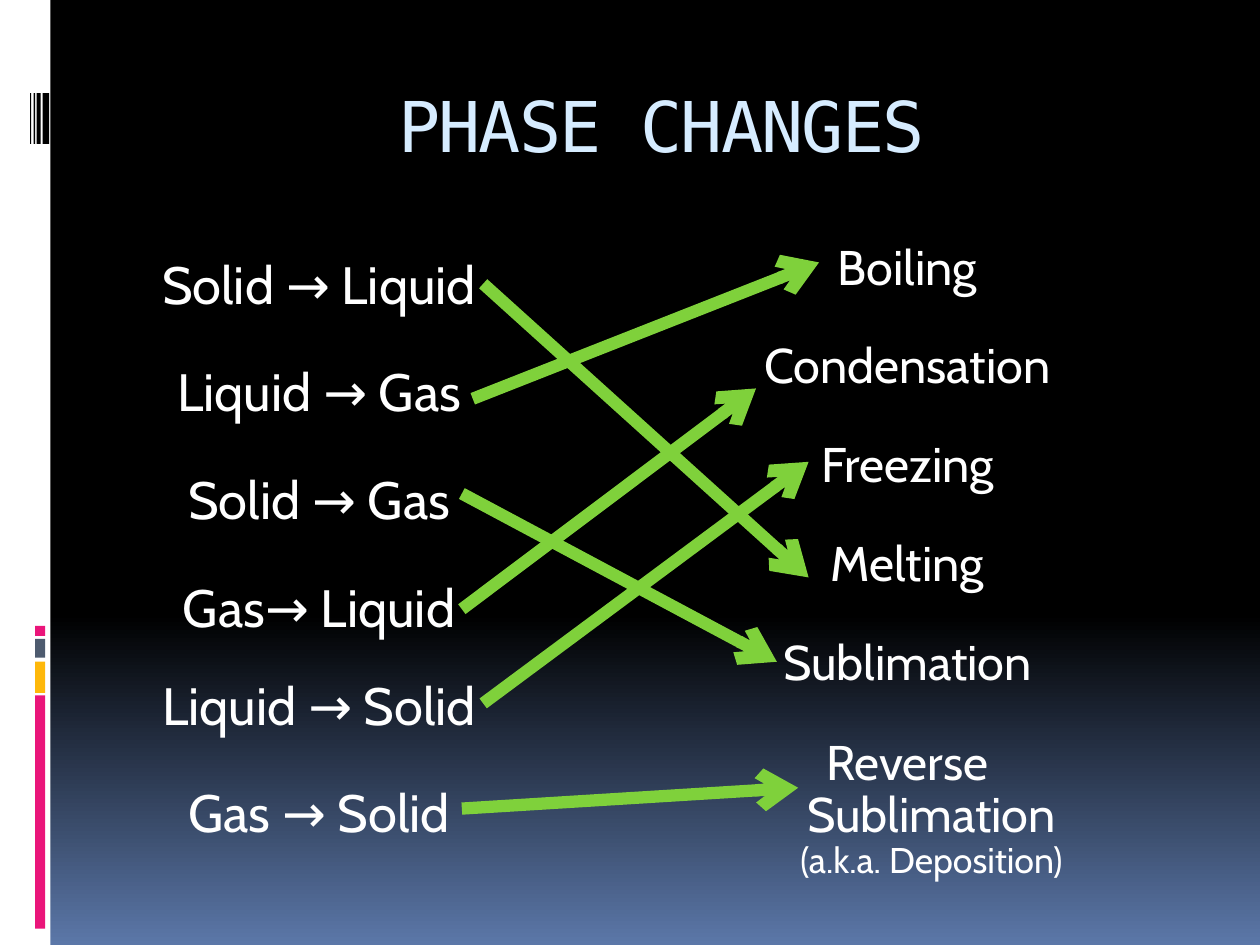
import copy
from typing import NamedTuple

import pptx
import pptx.dml.color
import pptx.enum.shapes
import pptx.enum.text
import pptx.oxml.ns
import pptx.oxml.xmlchemy
import pptx.util

Cm = pptx.util.Cm
Pt = pptx.util.Pt
qn = pptx.oxml.ns.qn
make = pptx.oxml.xmlchemy.OxmlElement

HUES = {
    "black": "000000", "white": "FFFFFF", "pink": "EA157A", "gold": "FEB80A",
    "slate": "4E5B6F", "blue": "5B77A8", "pale": "D6ECFF", "green": "7FD13B",
}


class Bar(NamedTuple):
    left: float
    top: float
    width: float
    height: float
    hue: str


class Arrow(NamedTuple):
    x: float
    y: float
    to_x: float
    to_y: float


class Line(NamedTuple):
    text: str
    gap: float = 0
    pitch: float = 1.0
    note: str = ""


# Side strip, its coloured blocks and the thin black stripes
BARS = [
    Bar(0, 0, 1.02, 19.05, "white"),
    Bar(0.71, 14.02, 0.2, 4.7, "pink"),
    Bar(0.71, 13.34, 0.2, 0.63, "gold"),
    Bar(0.71, 12.88, 0.2, 0.38, "slate"),
    Bar(0.71, 12.62, 0.2, 0.2, "pink"),
] + [
    Bar(left, 1.88, width, 1.02, "black")
    for left, width in ((0.86, 0.13), (0.74, 0.08), (0.68, 0.03), (0.61, 0.02))
]

CHANGES = [
    Line("Solid → Liquid"),
    Line("Liquid → Gas", 25.5),
    Line("Solid → Gas", 25.5),
    Line("Gas→ Liquid", 25.5),
    Line("Liquid → Solid", 20),
    Line("Gas → Solid", 25.5),
]
NAMES = [Line("Boiling")] + [
    Line(name, 26.6, 0.9)
    for name in ("Condensation", "Freezing", "Melting", "Sublimation")
] + [Line("Reverse Sublimation ", 26.6, 0.9, "(a.k.a. Deposition)")]

ARROWS = [
    Arrow(9.31, 12.28, 15.24, 7.83),
    Arrow(9.31, 9.95, 15.66, 13.34),
    Arrow(9.53, 8.04, 16.51, 5.29),
    Arrow(9.74, 5.72, 16.3, 11.64),
    Arrow(9.74, 14.18, 16.3, 9.31),
    Arrow(9.31, 16.3, 16.09, 15.88),
]


def tint(name: str) -> pptx.dml.color.RGBColor:
    return pptx.dml.color.RGBColor.from_string(HUES[name])


def style(thing, form: dict) -> None:
    for key, value in form.items():
        setattr(thing, key, value)


def shade(slide) -> None:
    """Fill the background: black, fading to blue at the foot."""
    fill = slide.background.fill
    fill.gradient()
    fill.gradient_angle = 270
    stops = slide.element.find(".//" + qn("a:gsLst"))
    stops.append(copy.deepcopy(stops[-1]))
    marks = ((0, "black"), (0.65, "black"), (1, "blue"))
    for stop, (place, hue) in zip(fill.gradient_stops, marks):
        stop.position = place
        stop.color.rgb = tint(hue)


def draw_bar(slide, bar: Bar) -> None:
    shape = slide.shapes.add_shape(
        pptx.enum.shapes.MSO_SHAPE.RECTANGLE, *map(Cm, bar[:4]))
    shape.shadow.inherit = False
    shape.fill.solid()
    shape.fill.fore_color.rgb = tint(bar.hue)
    shape.line.fill.background()


def draw_arrow(slide, arrow: Arrow) -> None:
    link = slide.shapes.add_connector(
        pptx.enum.shapes.MSO_CONNECTOR.STRAIGHT, *map(Cm, arrow))
    link.line.width = Pt(7)
    link.line.color.rgb = tint("green")
    tail = make("a:tailEnd")
    tail.set("type", "arrow")
    link.line._get_or_add_ln().append(tail)
    link._element.spPr.append(make("a:effectLst"))


def add_run(para, text: str, size: float, face: str, hue: str):
    run = para.add_run()
    run.text = text
    style(run.font, {"size": Pt(size), "name": face})
    run.font.color.rgb = tint(hue)
    return run


def add_box(slide, left: float, top: float, width: float, height: float):
    frame = slide.shapes.add_textbox(*map(Cm, (left, top, width, height))).text_frame
    style(frame, {"word_wrap": True,
                  "vertical_anchor": pptx.enum.text.MSO_ANCHOR.TOP})
    return frame


def draw_list(slide, box: tuple, lines: list, size: float) -> None:
    frame = add_box(slide, *box)
    for i, line in enumerate(lines):
        para = frame.add_paragraph() if i else frame.paragraphs[0]
        style(para, {"alignment": pptx.enum.text.PP_ALIGN.CENTER,
                     "space_before": Pt(line.gap),
                     "line_spacing": line.pitch})
        props = para._p.get_or_add_pPr()
        props.set("marL", str(Cm(1.14)))
        props.set("indent", str(Cm(-0.97)))
        add_run(para, line.text, size, "Cabin", "white")
        if line.note:
            add_run(para, line.note, 20.4, "Cabin", "white")


def draw_title(slide, text: str) -> None:
    frame = add_box(slide, 2.54, 1.42, 21.59, 2.54)
    frame.margin_top = Cm(0.25)
    para = frame.paragraphs[0]
    para.alignment = pptx.enum.text.PP_ALIGN.CENTER
    run = add_run(para, text, 40, "DejaVu Sans Mono", "pale")
    run.font._element.set("spc", "-100")


def main() -> None:
    deck = pptx.Presentation()
    style(deck, {"slide_width": Cm(25.4), "slide_height": Cm(19.05)})
    slide = deck.slides.add_slide(deck.slide_layouts[6])
    shade(slide)
    for bar in BARS:
        draw_bar(slide, bar)
    # Heading and the two columns to match
    draw_title(slide, "PHASE CHANGES")
    draw_list(slide, (2.54, 4.95, 7.62, 12.7), CHANGES, 30)
    draw_list(slide, (14.4, 4.65, 7.62, 13.77), NAMES, 27.8)
    # Arrows from each change to its name
    for arrow in ARROWS:
        draw_arrow(slide, arrow)
    deck.save("out.pptx")


if __name__ == "__main__":
    main()
